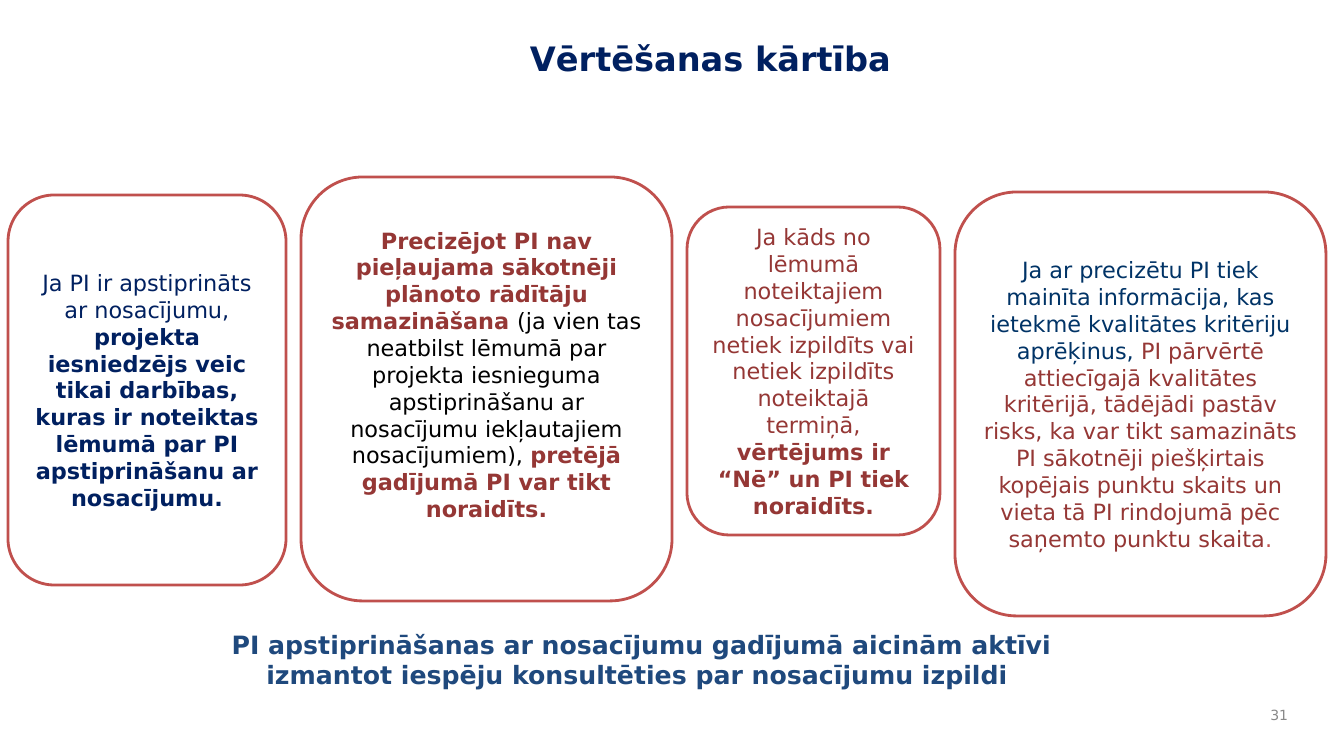
from dataclasses import dataclass

from pptx import Presentation, util as u
from pptx.dml.color import RGBColor
from pptx.enum import shapes, text

PX = 914400 / 100.8


def px(n):
    return u.Emu(round(n * PX))


@dataclass(frozen=True)
class Theme:
    font: str = "DejaVu Sans"
    navy: str = "002060"
    blue: str = "1F497D"
    deep: str = "003366"
    wine: str = "953735"
    red: str = "C0504D"
    black: str = "000000"
    grey: str = "898989"
    white: str = "FFFFFF"
    head: int = 24
    call: int = 18
    card: int = 16
    note: int = 10


class Deck:
    def __init__(self, theme):
        self.theme = theme
        self.prs = Presentation()
        self.prs.slide_width, self.prs.slide_height = px(1344), px(756)
        self.slide = self.prs.slides.add_slide(self.prs.slide_layouts[6])

    def run(self, para, words, size, color, bold=False):
        run = para.add_run()
        run.text = words
        font = run.font
        font.name, font.size, font.bold = self.theme.font, u.Pt(size), bold
        font.color.rgb = RGBColor.from_string(color)

    def fill(self, shape, runs, size, align="CENTER", anchor="MIDDLE", foot=5, indent=0):
        """Write one paragraph of (words, colour, bold) runs into a shape."""
        frame = shape.text_frame
        frame.word_wrap = True
        frame.vertical_anchor = text.MSO_ANCHOR[anchor]
        frame.margin_left = frame.margin_right = px(10)
        frame.margin_top, frame.margin_bottom = px(5), px(foot)
        para = frame.paragraphs[0]
        para.alignment = text.PP_ALIGN[align]
        if indent:
            para._p.get_or_add_pPr().set("marL", str(px(indent)))
        for words, color, bold in runs:
            self.run(para, words, size, color, bold)

    def label(self, box, words, size, color, bold=True, **form):
        shape = self.slide.shapes.add_textbox(*map(px, box))
        self.fill(shape, [(words, color, bold)], size, **form)

    def card(self, box, runs, **form):
        shape = self.slide.shapes.add_shape(
            shapes.MSO_SHAPE.ROUNDED_RECTANGLE, *map(px, box))
        shape.shadow.inherit = False
        shape.fill.solid()
        shape.fill.fore_color.rgb = RGBColor.from_string(self.theme.white)
        shape.line.color.rgb = RGBColor.from_string(self.theme.red)
        shape.line.width = u.Pt(2)
        self.fill(shape, runs, self.theme.card, **form)


def main():
    t = Theme()
    deck = Deck(t)
    deck.label((286, 33, 991, 118), "Vērtēšanas kārtība", t.head, t.navy,
               align="LEFT", anchor="TOP", indent=234)
    deck.label((166, 624, 951, 84),
               "PI apstiprināšanas ar nosacījumu gadījumā aicinām aktīvi "
               "izmantot iespēju konsultēties par nosacījumu izpildi ",
               t.call, t.blue, anchor="TOP")
    deck.label((1254, 698, 44, 33), "31", t.note, t.grey, bold=False, align="RIGHT")

    # top, width, height, bottom inset, runs
    cards = [
        (195, 278, 390, 5, [
            ("Ja PI ir apstiprināts ar nosacījumu, ", t.navy, False),
            ("projekta iesniedzējs veic tikai darbības, kuras ir noteiktas "
             "lēmumā par PI apstiprināšanu ar nosacījumu.", t.navy, True)]),
        (177, 371, 424, 34, [
            ("Precizējot PI nav pieļaujama sākotnēji plānoto rādītāju "
             "samazināšana ", t.wine, True),
            ("(ja vien tas neatbilst lēmumā par projekta iesnieguma "
             "apstiprināšanu ar nosacījumu iekļautajiem nosacījumiem), ",
             t.black, False),
            ("pretējā gadījumā PI var tikt noraidīts.", t.wine, True)]),
        (207, 253, 328, 5, [
            ("Ja kāds no lēmumā noteiktajiem nosacījumiem netiek izpildīts "
             "vai netiek izpildīts noteiktajā termiņā, ", t.wine, False),
            ("vērtējums ir “Nē” un PI tiek noraidīts.", t.wine, True)]),
        (192, 371, 424, 5, [
            ("Ja ar precizētu PI tiek mainīta informācija, kas ietekmē "
             "kvalitātes kritēriju aprēķinus, ", t.deep, False),
            ("PI pārvērtē attiecīgajā kvalitātes kritērijā, tādējādi pastāv "
             "risks, ka var tikt samazināts PI sākotnēji piešķirtais kopējais "
             "punktu skaits un vieta tā PI rindojumā pēc saņemto punktu skaita",
             t.wine, False),
            (".", t.red, False)]),
    ]
    left, gap = 8, 15
    for top, wide, high, foot, runs in cards:
        deck.card((left, top, wide, high), runs, foot=foot)
        left += wide + gap

    deck.prs.save("out.pptx")


if __name__ == "__main__":
    main()
